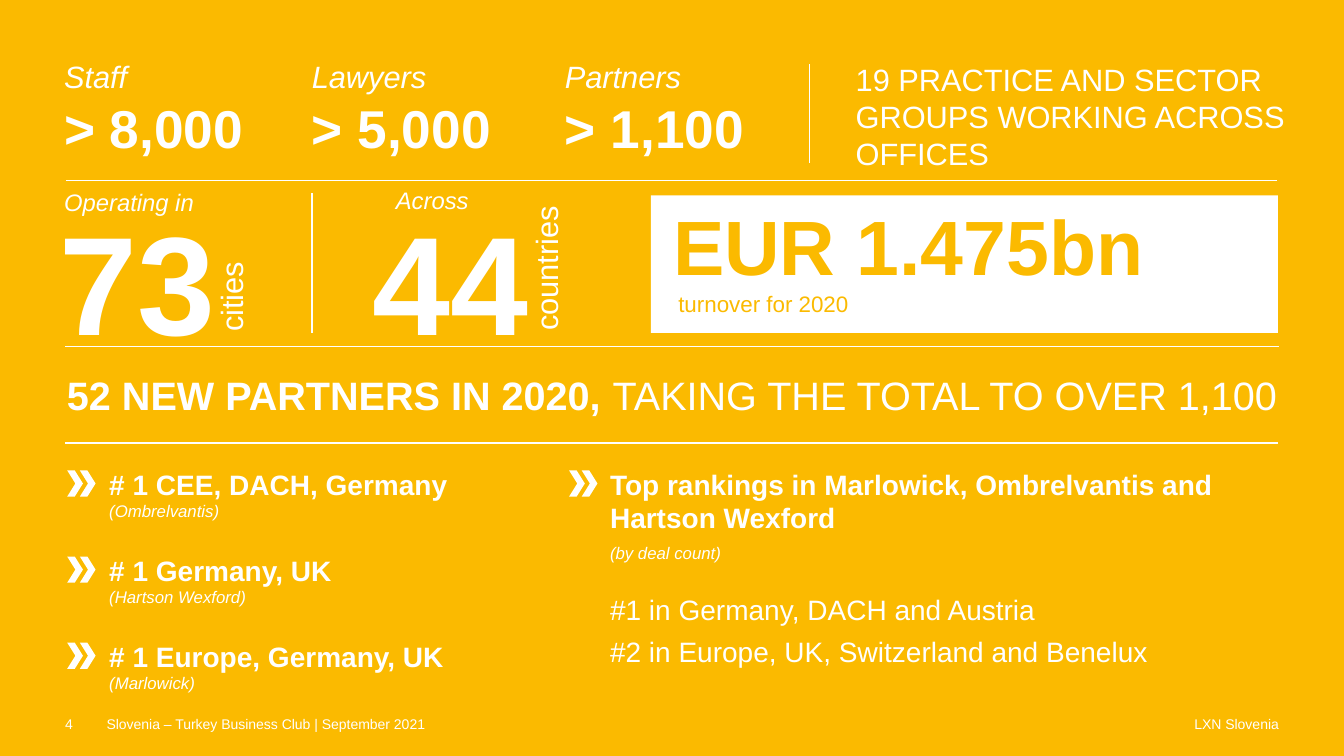
import pptx
import pptx.util
import pptx.dml.color
import pptx.enum.shapes
import pptx.enum.text
import pptx.oxml.ns
import lxml.etree

SCALE = 9525
GOLD = "FBBA00"
WHITE = "FFFFFF"
SHAPE = pptx.enum.shapes.MSO_SHAPE
ALIGN = pptx.enum.text.PP_ALIGN
ANCHOR = pptx.enum.text.MSO_ANCHOR
qn = pptx.oxml.ns.qn


def px(*sizes):
    return [pptx.util.Emu(size * SCALE) for size in sizes]


def paint(target, code):
    if hasattr(target, "solid"):
        target.solid()
        target = target.fore_color
    target.rgb = pptx.dml.color.RGBColor.from_string(code)


def style(para, size, color=WHITE, bold=False, italic=False):
    font = para.font
    font.name = "Arial"
    font.size = pptx.util.Pt(size)
    font.bold = bold
    font.italic = italic
    paint(font.color, color)


def set_frame(shape, inset=True, middle=False):
    frame = shape.text_frame
    frame.word_wrap = True
    frame.auto_size = pptx.enum.text.MSO_AUTO_SIZE.NONE
    frame.vertical_anchor = ANCHOR.MIDDLE if middle else ANCHOR.TOP
    if not inset:
        frame.margin_left = frame.margin_top = 0
        frame.margin_right = frame.margin_bottom = 0
    return frame


def add_text(slide, box, words, size, color=WHITE, bold=False, italic=False,
             inset=False, middle=False, align=ALIGN.LEFT, turn=0):
    shape = slide.shapes.add_textbox(*px(*box))
    shape.rotation = turn
    para = set_frame(shape, inset, middle).paragraphs[0]
    para.text = words
    para.alignment = align
    style(para, size, color, bold, italic)


def add_rule(slide, *ends):
    rule = slide.shapes.add_connector(
        pptx.enum.shapes.MSO_CONNECTOR.STRAIGHT, *px(*ends))
    paint(rule.line.fill, WHITE)
    rule.line.width = pptx.util.Pt(1)
    lxml.etree.SubElement(rule._element.spPr, qn("a:effectLst"))


def add_block(shapes, kind, box):
    block = shapes.add_shape(kind, *px(*box))
    block.shadow.inherit = False
    paint(block.fill, WHITE)
    block.line.fill.background()
    return block


def add_mark(slide, left, top):
    group = slide.shapes.add_group_shape()
    for step in (0, 12):
        arrow = add_block(group.shapes, SHAPE.CHEVRON,
                          (left + step, top, 15, 25))
        arrow.adjustments[0] = 0.52


def add_rank(slide, top, claim, source):
    add_mark(slide, 64, top + 3)
    shape = slide.shapes.add_textbox(*px(104, top, 438, 64))
    para = set_frame(shape, inset=False).paragraphs[0]
    style(para, 20)
    head = para.add_run()
    head.text = claim
    head.font.bold = True
    para.add_line_break()
    note = para.add_run()
    note.text = source
    note.font.size = pptx.util.Pt(12)
    note.font.italic = True


def place(shape, box):
    shape.left, shape.top, shape.width, shape.height = px(*box)


def fill_title(title):
    place(title, (63, 330, 1155, 92))
    para = set_frame(title, inset=False, middle=True).paragraphs[0]
    para.alignment = ALIGN.CENTER
    style(para, 28.3)
    for words, bold in (("52 NEW PARTNERS IN 2020, ", True),
                        ("TAKING THE TOTAL TO OVER 1,100", False)):
        run = para.add_run()
        run.text = words
        run.font.bold = bold


def fill_list(body):
    place(body, (581, 445, 637, 221))
    frame = set_frame(body, inset=False)
    rows = (
        ("Top rankings in Marlowick, Ombrelvantis and \vHartson Wexford",
         20, True, False, 0),
        ("(by deal count)", 12, False, True, 0),
        ("#1 in Germany, DACH and Austria", 20, False, False, 15),
        ("#2 in Europe, UK, Switzerland and Benelux", 20, False, False, 0),
    )
    for index, (words, size, bold, italic, gap) in enumerate(rows):
        para = frame.add_paragraph() if index else frame.paragraphs[0]
        props = para._p.get_or_add_pPr()
        props.set("marL", "0")
        props.set("indent", "0")
        lxml.etree.SubElement(props, qn("a:buNone"))
        para.text = words
        para.space_before = pptx.util.Pt(gap)
        para.space_after = pptx.util.Pt(6)
        style(para, size, bold=bold, italic=italic)


def main():
    deck = pptx.Presentation()
    deck.slide_width, deck.slide_height = px(1280, 720)
    slide = deck.slides.add_slide(deck.slide_layouts[1])
    paint(slide.background.fill, GOLD)

    for left, label, count in ((61, "Staff", "> 8,000"),
                               (297, "Lawyers", "> 5,000"),
                               (538, "Partners", "> 1,100")):
        add_text(slide, (left, 55, 189, 36), label, 22, italic=True)
        add_text(slide, (left, 91, 189, 82), count, 38, bold=True)
    add_text(slide, (815, 58, 436, 93),
             "19 PRACTICE AND SECTOR GROUPS WORKING ACROSS OFFICES", 22)

    for ends in ((771, 61, 771, 155), (297, 184, 297, 317),
                 (63, 172, 1216, 172), (62, 330, 1218, 330),
                 (62, 422, 1217, 422)):
        add_rule(slide, *ends)

    add_text(slide, (61, 179, 230, 44), "Operating in", 17, italic=True)
    add_text(slide, (377, 177, 200, 44), "Across", 17, italic=True)
    for left, count in ((57, "73"), (355, "44")):
        add_text(slide, (left, 186, 151, 157), count, 100, bold=True)
    for box, unit in (((141, 225, 157, 44), "cities"),
                      ((425, 208, 189, 44), "countries")):
        add_text(slide, box, unit, 22, inset=True, turn=270)

    add_block(slide.shapes, SHAPE.RECTANGLE, (620, 186, 597, 131))
    add_text(slide, (641, 189, 567, 75), "EUR 1.475bn", 55, GOLD, bold=True)
    add_text(slide, (646, 276, 570, 39), "turnover for 2020", 16, GOLD)

    fill_title(slide.shapes.title)
    ranks = (("# 1 CEE, DACH, Germany", "(Ombrelvantis)"),
             ("# 1 Germany, UK", "(Hartson Wexford)"),
             ("# 1 Europe, Germany, UK", "(Marlowick)"))
    for index, (claim, source) in enumerate(ranks):
        add_rank(slide, 445 + 82 * index, claim, source)
    add_mark(slide, 542, 448)
    fill_list(slide.placeholders[1])

    add_text(slide, (62, 658, 30, 62), "4", 10, middle=True)
    add_text(slide, (92, 658, 416, 62),
             "Slovenia – Turkey Business Club | September 2021", 10,
             inset=True, middle=True)
    add_text(slide, (878, 658, 340, 62), "LXN Slovenia", 10,
             middle=True, align=ALIGN.RIGHT)
    deck.save("out.pptx")


if __name__ == "__main__":
    main()
